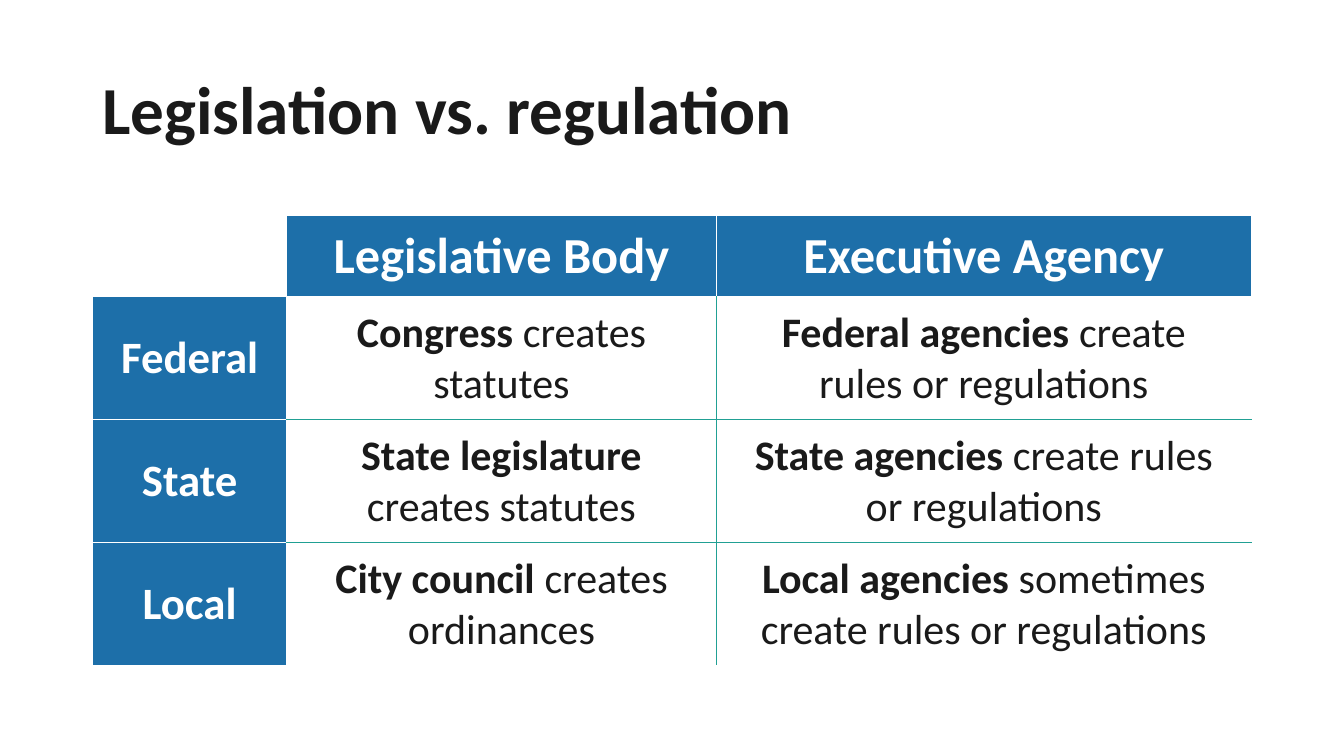
from lxml import etree
from pptx import Presentation
from pptx.dml.color import RGBColor
from pptx.enum.text import MSO_ANCHOR, PP_ALIGN
from pptx.oxml.ns import qn
from pptx.util import Cm, Pt

MIDDLE = MSO_ANCHOR.MIDDLE
CENTER = PP_ALIGN.CENTER
COLORS = {"white": "FFFFFF", "blue": "1D6FA9", "teal": "21A094", "ink": "1A1A1A"}


def add_run(p, text, size, color, bold=True):
    r = p.add_run()
    r.text = text
    font = {"name": "Calibri", "size": Pt(size), "bold": bold}
    for key, value in font.items():
        setattr(r.font, key, value)
    r.font.color.rgb = RGBColor.from_string(COLORS[color])


def add_border(cell, side, color):
    ln = etree.SubElement(cell._tc.get_or_add_tcPr(), qn("a:ln" + side), w=str(Pt(1)))
    fill = etree.SubElement(ln, qn("a:solidFill"))
    etree.SubElement(fill, qn("a:srgbClr"), val=COLORS[color])


prs = Presentation()
prs.slide_width, prs.slide_height = Cm(33.87), Cm(19.05)
s = prs.slides.add_slide(prs.slide_layouts[6])

# Title
sp = s.shapes.add_textbox(Cm(2.33), Cm(1.01), Cm(29.21), Cm(3.68))
tf = sp.text_frame
tf.word_wrap = True
tf.vertical_anchor = MIDDLE
p = tf.paragraphs[0]
p.line_spacing = 0.9
add_run(p, "Legislation vs. regulation", 48, "ink")

# Table content: label cells hold one text, body cells a bold lead and the rest
rows = [
    ["", "Legislative Body", "Executive Agency"],
    ["Federal", ("Congress ", "creates statutes"),
     ("Federal agencies ", "create rules or regulations")],
    ["State", ("State legislature ", "creates statutes"),
     ("State agencies ", "create rules or regulations")],
    ["Local", ("City council ", "creates ordinances"),
     ("Local agencies ", "sometimes create rules or regulations")],
]
col_widths = [4.9, 10.82, 13.49]
row_heights = [2.06, 3.1, 3.1, 3.1]
last_row, last_col = len(rows) - 1, len(col_widths) - 1

# Table frame
table = s.shapes.add_table(len(rows), len(col_widths), Cm(2.33), Cm(5.42),
                           Cm(sum(col_widths)), Cm(sum(row_heights))).table
table.first_row = table.horz_banding = False
for column, width in zip(table.columns, col_widths):
    column.width = Cm(width)
for row, height in zip(table.rows, row_heights):
    row.height = Cm(height)

# Cells
cell_format = {"vertical_anchor": MIDDLE, "margin_left": Cm(0.51), "margin_right": Cm(0.51),
               "margin_top": Cm(0.25), "margin_bottom": Cm(0.25)}
for i, row in enumerate(rows):
    for j, content in enumerate(row):
        cell = table.cell(i, j)
        for key, value in cell_format.items():
            setattr(cell, key, value)

        # Teal rules only between body cells, white elsewhere
        body = i > 0 and j > 0
        teal_sides = {"L": body and j > 1, "R": body and j < last_col,
                      "T": body and i > 1, "B": body and i < last_row}
        for side, teal in teal_sides.items():
            add_border(cell, side, "teal" if teal else "white")

        cell.fill.solid()
        fill = "white" if body or not content else "blue"
        cell.fill.fore_color.rgb = RGBColor.from_string(COLORS[fill])

        p = cell.text_frame.paragraphs[0]
        p.alignment = CENTER
        if body:
            lead, rest = content
            add_run(p, lead, 30, "ink")
            add_run(p, rest, 30, "ink", bold=False)
        elif content:
            add_run(p, content, 36 if i == 0 else 32, "white")

prs.save("out.pptx")
